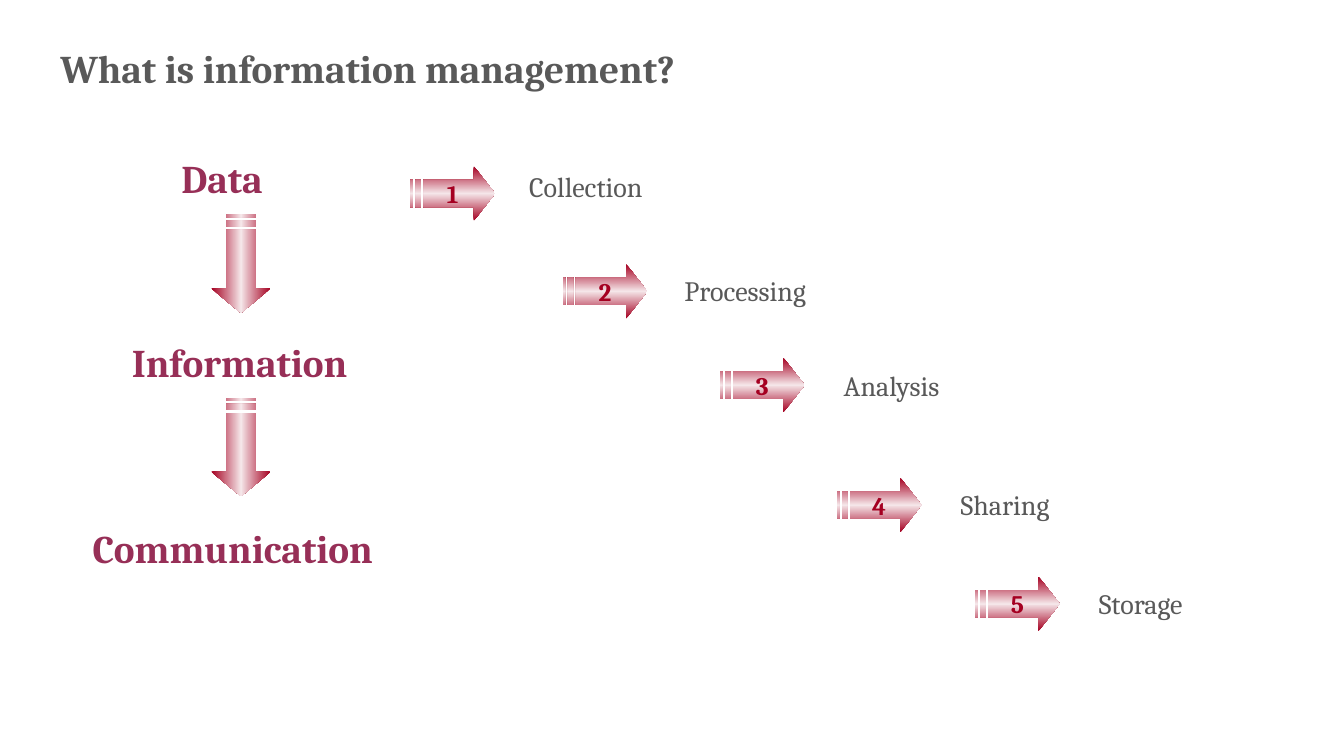
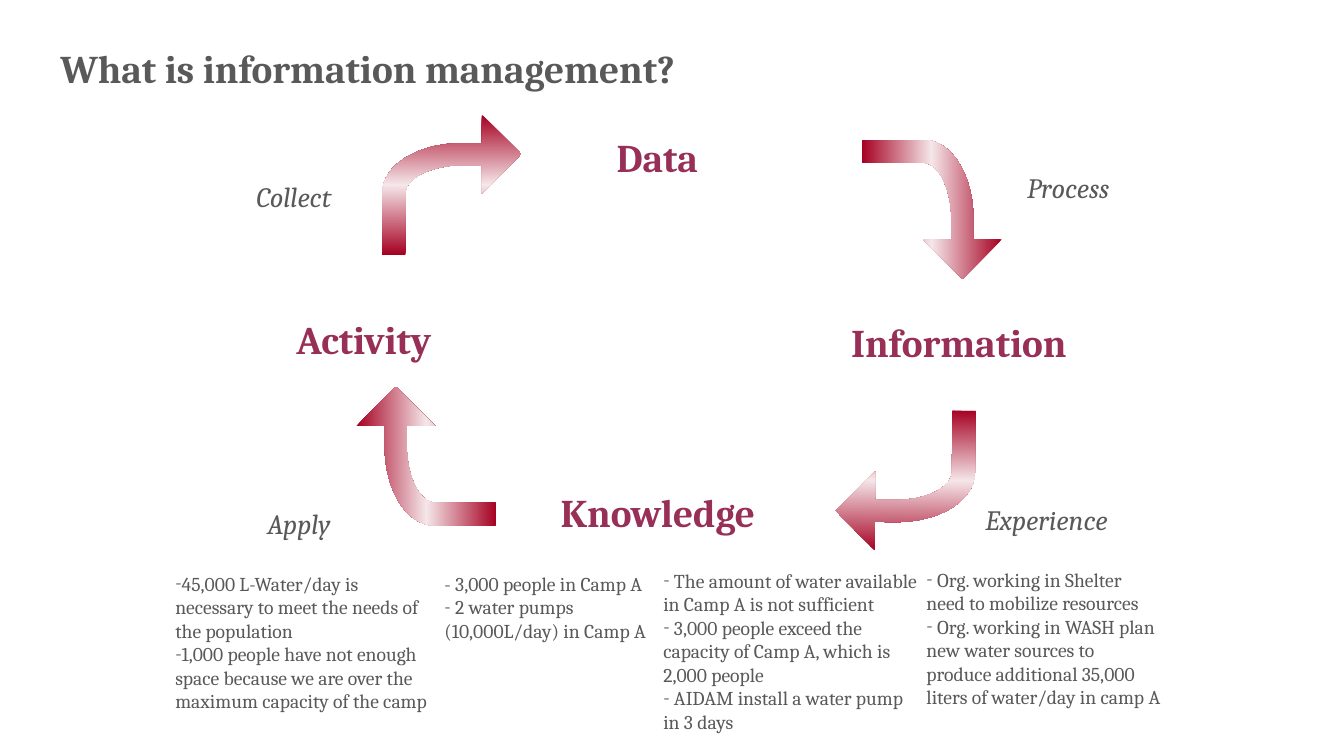
from copy import deepcopy
from dataclasses import dataclass

from lxml import etree
from pptx import Presentation
from pptx.dml.color import RGBColor
from pptx.enum.text import MSO_ANCHOR, PP_ALIGN
from pptx.oxml.ns import qn
from pptx.util import Pt

PX = 9144  # 100 px to the inch
LEFT, CENTER = PP_ALIGN.LEFT, PP_ALIGN.CENTER
MIDDLE = MSO_ANCHOR.MIDDLE
BLANK = 6


@dataclass(frozen=True)
class Style:
    size: int
    color: str
    bold: bool = False
    italic: bool = False


@dataclass(frozen=True)
class Theme:
    font: str = "Cambria"
    fade: tuple = ("A50021", "F5E6E9", "A50021")
    title: Style = Style(28, "595959", bold=True)
    stage: Style = Style(28, "972F57", bold=True)
    step: Style = Style(20, "595959")
    action: Style = Style(20, "595959", italic=True)
    number: Style = Style(18, "A50021", bold=True)
    note: Style = Style(14, "595959")


THEME = Theme()
TITLE = "What is information management?"

# text, left, top, width
STAGES = [
    ("Data", 170, 148, 106),
    ("Information", 121, 331, 240),
    ("Communication", 82, 515, 317),
]
DOWNS = [(190, 232), (190, 414)]
# text, arrow left and top, label left and top
STEPS = [
    ("Collection", 407, 165, 515, 163),
    ("Processing", 558, 262, 669, 266),
    ("Analysis", 714, 355, 827, 361),
    ("Sharing", 830, 474, 943, 479),
    ("Storage", 967, 572, 1080, 577),
]

# text, left, top, width, alignment
NODES = [
    ("Data", 565, 127, 174, CENTER),
    ("Information", 801, 311, 300, CENTER),
    ("Knowledge", 494, 479, 317, CENTER),
    ("Activity", 284, 308, 222, LEFT),
]
ACTIONS = [
    ("Process", 987, 164, 145),
    ("Collect", 225, 173, 133),
    ("Experience", 937, 494, 202),
    ("Apply", 209, 498, 175),
]
# left, top, rotation
BENDS = [(379, 114, 0), (855, 138, 90), (829, 407, 180.5), (354, 383, 270)]
# left, top, width, height, (bulleted, text) lines
NOTES = [
    (164, 562, 275, 151, [
        (True, "45,000 L-Water/day is necessary to meet the needs of "
               "the population"),
        (True, "1,000 people have not enough space because we are over "
               "the maximum capacity of the camp"),
    ]),
    (431, 562, 225, 81, [
        (False, "- 3,000 people in Camp A"),
        (True, " 2 water pumps (10,000L/day) in Camp A"),
    ]),
    (648, 559, 275, 175, [
        (True, " The amount of water available in Camp A is not sufficient"),
        (True, " 3,000 people exceed the capacity of Camp A, which is "
               "2,000 people"),
        (True, " AIDAM install a water pump in 3 days"),
    ]),
    (909, 558, 255, 151, [
        (True, " Org. working in Shelter need to mobilize resources"),
        (True, " Org. working in WASH plan new water sources to produce "
               "additional 35,000 liters of water/day in camp A"),
    ]),
]


def write(para, text, style, align=LEFT):
    para.alignment = align
    run = para.add_run()
    run.text = text
    font = run.font
    font.name, font.size = THEME.font, Pt(style.size)
    font.bold, font.italic = style.bold, style.italic
    font.color.rgb = RGBColor.from_string(style.color)


def add_box(slide, left, top, width, height):
    """Add an empty wrapping text box and return its frame."""
    box = slide.shapes.add_textbox(left * PX, top * PX,
                                   width * PX, height * PX)
    box.text_frame.word_wrap = True
    return box.text_frame


def add_label(slide, text, left, top, width, style, align=LEFT):
    height = 2 * style.size + 2
    frame = add_box(slide, left, top, width, height)
    write(frame.paragraphs[0], text, style, align)


def add_dash(para):
    props = para._p.get_or_add_pPr()
    props.set("marL", "0")
    props.set("indent", "0")
    etree.SubElement(props, qn("a:buFont")).set("typeface", THEME.font)
    etree.SubElement(props, qn("a:buChar")).set("char", "-")


def add_note(slide, left, top, width, height, lines):
    frame = add_box(slide, left, top, width, height)
    for index, (dash, text) in enumerate(lines):
        para = frame.add_paragraph() if index else frame.paragraphs[0]
        if dash:
            add_dash(para)
        write(para, text, THEME.note)


def add_outline(slide, left, top, loops, scale, turn=0):
    """Add closed loops of points as one shape with the shared fade."""
    maker = slide.shapes.build_freeform(*loops[0][0], scale=scale)
    for index, loop in enumerate(loops):
        if index:
            maker.move_to(*loop[0])
        maker.add_line_segments(loop[1:], close=True)
    shape = maker.convert_to_shape(left * PX, top * PX)
    shape.rotation = turn
    shape.shadow.inherit = False
    shape.line.fill.background()
    fill = shape.fill
    fill.gradient()
    fill.gradient_angle = 90
    stops = shape._element.spPr.find(qn("a:gradFill")).find(qn("a:gsLst"))
    middle = deepcopy(stops[0])
    middle.set("pos", "50000")
    stops.insert(1, middle)
    for stop, color in zip(fill.gradient_stops, THEME.fade):
        stop.color.rgb = RGBColor.from_string(color)
    return shape


def add_striped(slide, left, top, width, height, turn=0):
    """Add a striped arrow, drawn on a grid of 32 by 4."""
    head = [(24, 0), (24, 1), (5, 1), (5, 3), (24, 3), (24, 4), (32, 2)]
    stripes = [[(a, 1), (a, 3), (b, 3), (b, 1)] for a, b in ((2, 4), (0, 1))]
    scale = (width * PX / 32, height * PX / 4)
    return add_outline(slide, left, top, [head, *stripes], scale, turn)


def curve(shape, first):
    """Turn three straight segments, from index first, into one curve."""
    lines = list(shape._element.iter(qn("a:lnTo")))[first:first + 3]
    bend = etree.Element(qn("a:cubicBezTo"))
    lines[0].addprevious(bend)
    for line in lines:
        bend.append(line[0])
        line.getparent().remove(line)


def add_bend(slide, left, top, turn):
    outer = [(35, 28), (0, 50), (0, 78)]
    inner = [(23, 63), (48, 50), (79, 50)]
    loop = [(138, 39), (99, 0), (99, 28), (79, 28), *outer, (0, 139),
            (23, 139), (23, 78), *inner, (99, 50), (99, 78)]
    shape = add_outline(slide, left, top, [loop], PX, turn)
    # the later curve first, so that the earlier index holds
    for part in (inner, outer):
        curve(shape, loop.index(part[0]) - 1)


def add_step(slide, number, text, left, top, text_left, text_top):
    frame = add_striped(slide, left, top, 84, 54).text_frame
    frame.word_wrap = False
    frame.vertical_anchor = MIDDLE
    write(frame.paragraphs[0], str(number), THEME.number, CENTER)
    add_label(slide, text, text_left, text_top, 160, THEME.step)


def add_slide(deck):
    slide = deck.slides.add_slide(deck.slide_layouts[BLANK])
    add_label(slide, TITLE, 50, 39, 858, THEME.title)
    return slide


def draw_steps(deck):
    slide = add_slide(deck)
    for stage in STAGES:
        add_label(slide, *stage, THEME.stage)
    for left, top in DOWNS:
        add_striped(slide, left, top, 98, 59, 90)
    for number, step in enumerate(STEPS, 1):
        add_step(slide, number, *step)


def draw_cycle(deck):
    slide = add_slide(deck)
    for text, left, top, width, align in NODES:
        add_label(slide, text, left, top, width, THEME.stage, align)
    for action in ACTIONS:
        add_label(slide, *action, THEME.action, CENTER)
    for bend in BENDS:
        add_bend(slide, *bend)
    for note in NOTES:
        add_note(slide, *note)


def main():
    deck = Presentation()
    deck.slide_width, deck.slide_height = 1333 * PX, 750 * PX
    draw_steps(deck)
    draw_cycle(deck)
    deck.save("out.pptx")


if __name__ == "__main__":
    main()
